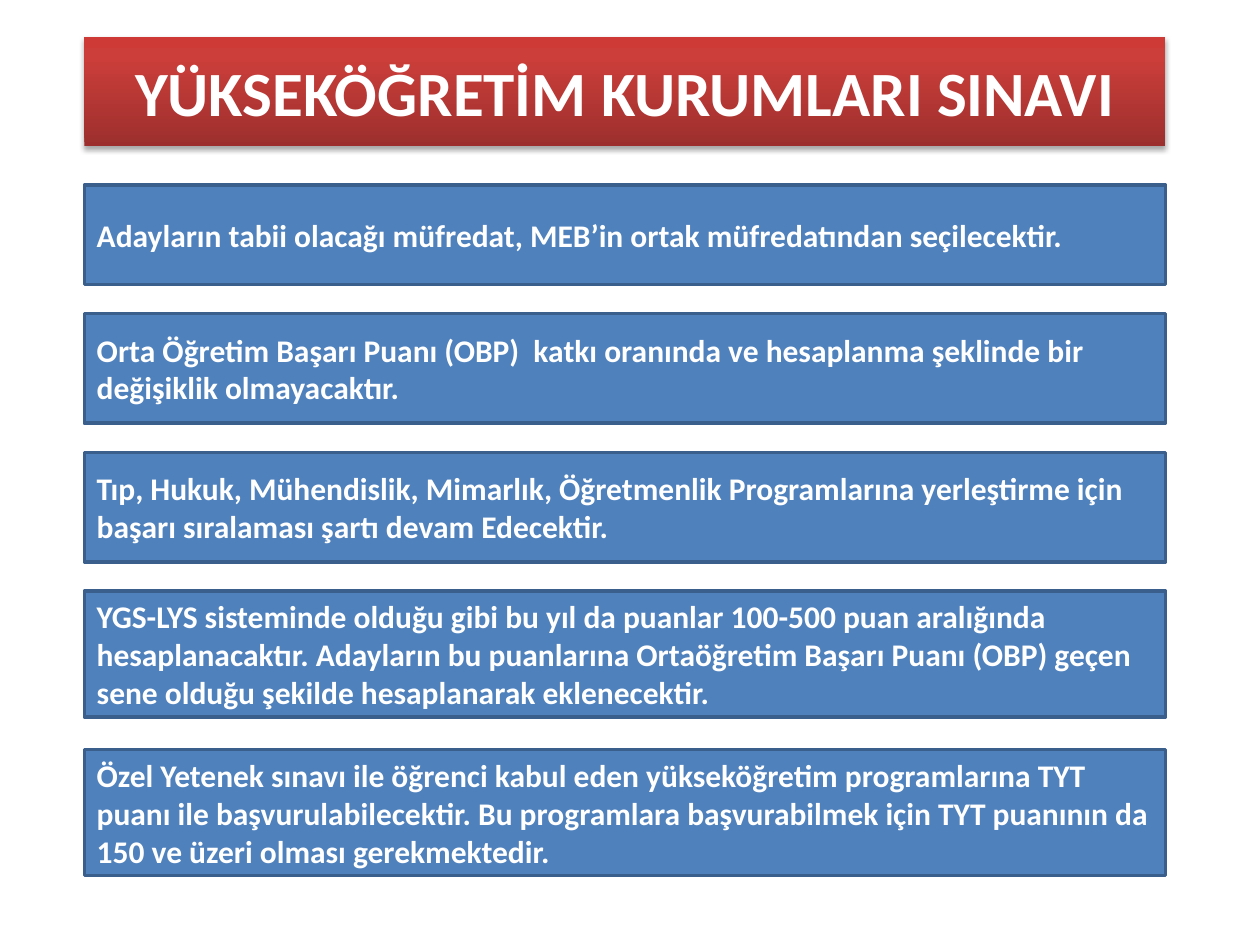
from lxml import etree
from pptx import Presentation
from pptx.dml.color import RGBColor
from pptx.enum import shapes, text
from pptx.util import Pt

A = "http://schemas.openxmlformats.org/drawingml/2006/main"
LEFT, WIDTH = 48.2, 617.8
HEADING = "YÜKSEKÖĞRETİM KURUMLARI SINAVI"
# Gap above, height and wording of each rule
RULES = [
    (0, 56.9, "Adayların tabii olacağı müfredat, MEB’in ortak müfredatından seçilecektir."),
    (16.6, 62.6, "Orta Öğretim Başarı Puanı (OBP)  katkı oranında ve hesaplanma şeklinde bir "
                 "değişiklik olmayacaktır."),
    (16.6, 62.6, "Tıp, Hukuk, Mühendislik, Mimarlık, Öğretmenlik Programlarına yerleştirme için "
                 "başarı sıralaması şartı devam Edecektir."),
    (16.6, 72, "YGS-LYS sisteminde olduğu gibi bu yıl da puanlar 100-500 puan aralığında "
               "hesaplanacaktır. Adayların bu puanlarına Ortaöğretim Başarı Puanı (OBP) geçen "
               "sene olduğu şekilde hesaplanarak eklenecektir."),
    (18.7, 72, "Özel Yetenek sınavı ile öğrenci kabul eden yükseköğretim programlarına TYT "
               "puanı ile başvurulabilecektir. Bu programlara başvurabilmek için TYT puanının da "
               "150 ve üzeri olması gerekmektedir."),
]


def color(value):
    return RGBColor.from_string(value)


def write(shape, wording, size, align=text.PP_ALIGN.LEFT):
    frame = shape.text_frame
    frame.word_wrap = True
    frame.auto_size = text.MSO_AUTO_SIZE.NONE
    frame.vertical_anchor = text.MSO_ANCHOR.MIDDLE
    paragraph = frame.paragraphs[0]
    paragraph.alignment = align
    run = paragraph.add_run()
    run.text = wording
    run.font.name = "Calibri"
    run.font.size = Pt(size)
    run.font.bold = True
    run.font.color.rgb = color("FFFFFF")


def style_banner(shape):
    """Give the shape round corners, a red gradient and a soft shadow."""
    stops = "".join(
        f'<a:gs pos="{percent * 1000}"><a:srgbClr val="{value}"/></a:gs>'
        for percent, value in [(0, "9C2F2D"), (80, "CB3E3A"), (100, "CE3B37")])
    parts = etree.fromstring(
        f'<a:parts xmlns:a="{A}">'
        '<a:prstGeom prst="roundRect"><a:avLst/></a:prstGeom>'
        f'<a:gradFill rotWithShape="1"><a:gsLst>{stops}</a:gsLst>'
        '<a:lin ang="16200000" scaled="0"/></a:gradFill>'
        '<a:ln><a:noFill/></a:ln>'
        f'<a:effectLst><a:outerShdw blurRad="{Pt(3.1)}" dist="{Pt(1.8)}" dir="5400000" '
        'rotWithShape="0"><a:srgbClr val="000000"><a:alpha val="35000"/></a:srgbClr>'
        '</a:outerShdw></a:effectLst></a:parts>')
    shape._element.spPr.extend(list(parts))


def place_title(slide, left, top, width, height):
    title = slide.shapes.title
    title.left, title.top, title.width, title.height = map(Pt, (left, top, width, height))
    style_banner(title)
    write(title, HEADING, size=36, align=text.PP_ALIGN.CENTER)


def place_rules(slide, left, top, width):
    for gap, height, wording in RULES:
        top += gap
        rule = slide.shapes.add_shape(shapes.MSO_SHAPE.RECTANGLE,
                                      *map(Pt, (left, top, width, height)))
        rule.shadow.inherit = False
        rule.fill.solid()
        rule.fill.fore_color.rgb = color("4F81BD")
        rule.line.color.rgb = color("3A5F8C")
        rule.line.width = Pt(2)
        write(rule, wording, size=18)
        top += height


def main():
    deck = Presentation()
    deck.slide_width, deck.slide_height = Pt(720), Pt(540)
    slide = deck.slides.add_slide(deck.slide_layouts.get_by_name("Title Only"))
    place_title(slide, LEFT, 20.9, WIDTH, 62.6)
    place_rules(slide, LEFT, 105.8, WIDTH)
    deck.save("out.pptx")


if __name__ == "__main__":
    main()
